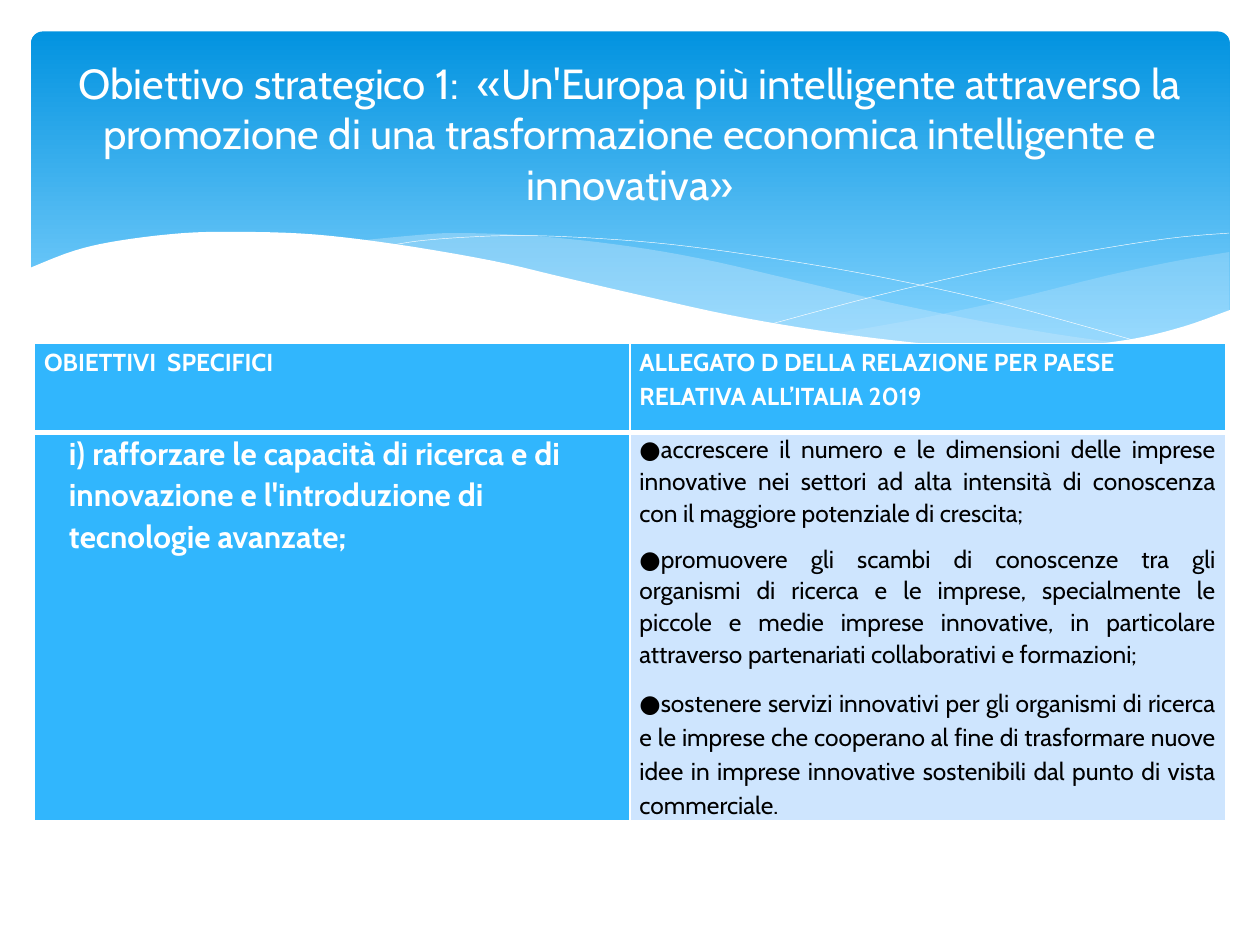
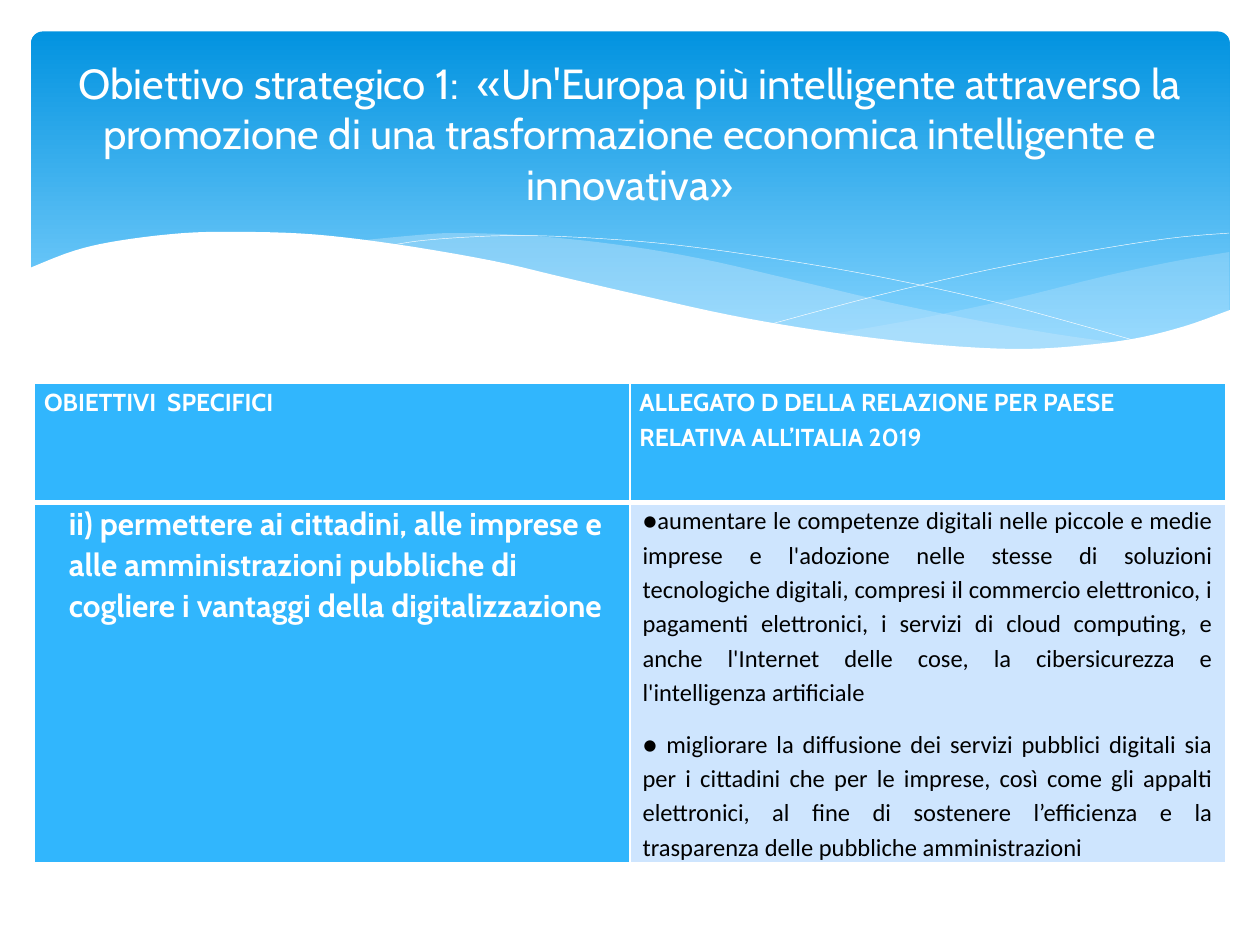
from dataclasses import dataclass

from lxml.etree import SubElement
from pptx import Presentation
from pptx.dml.color import RGBColor
from pptx.enum.shapes import MSO_SHAPE
from pptx.enum.text import MSO_ANCHOR, PP_ALIGN
from pptx.oxml.ns import qn
from pptx.util import Pt


@dataclass(frozen=True)
class Theme:
    white: str = "FFFFFF"
    black: str = "000000"
    band_top: str = "0293E0"
    band_bottom: str = "83D3FE"
    swell: str = "C6E7FC"
    accent: str = "31B6FD"
    pale: str = "CEE5FE"
    font: str = "Cabin"
    alt_font: str = "Calibri"
    title_size: int = 24
    goal_size: int = 18
    text_size: int = 14


@dataclass(frozen=True)
class Box:
    x: float
    y: float
    w: float
    h: float


@dataclass(frozen=True)
class Point:
    text: str
    line: float
    after: float = 0


@dataclass(frozen=True)
class Objective:
    table: Box
    header_h: float
    goal: str
    points: tuple
    font: str
    margin: float


T = Theme()
BAND = Box(17.8, 18, 684.9, 194.4)
TITLE_BOX = Box(36, 26.8, 648, 98.6)
TITLE = ("Obiettivo strategico 1:  «Un'Europa più intelligente attraverso la promozione "
         "di una trasformazione economica intelligente e innovativa»")
HEADERS = ("OBIETTIVI  SPECIFICI",
           "ALLEGATO D DELLA RELAZIONE PER PAESE RELATIVA ALL’ITALIA 2019")

# Wave nodes, in points from the top left corner of the band
RIGHT_SWELL_TOP = [(684.7, 126), (655, 131), (623.5, 137.5), (602, 142.6),
                   (561.6, 152.6), (507, 164.2), (458, 172.8)]
RIGHT_SWELL_BASE = [(458, 172.8), (489.6, 177), (527, 180.7), (560, 182.2), (589.7, 181.4),
                    (616.3, 178.6), (645, 172.8), (665.3, 167), (684.7, 159.8)]
LEFT_SWELL_TOP = [(188, 119.5), (218, 116.6), (242, 115.2), (284.4, 116.6), (334, 121.7),
                  (381.6, 129.6), (435, 141.8), (490.3, 154.8), (540, 165),
                  (584.6, 172.8), (625, 178.6)]
LEFT_SWELL_BASE = [(625, 178.6), (599, 181.4), (571, 182.2), (530, 181.4), (482.4, 176.4),
                   (427, 167.8), (363.6, 154.8), (305.3, 141.8), (257.8, 131),
                   (228, 125.3), (188, 119.5)]
FALLING_LINE = [(204.5, 122.4), (223, 119.5), (251.3, 117.4), (281.5, 116.6), (319.7, 118),
                (365.8, 121.7), (419.8, 129), (482.4, 139.7), (554.4, 155.5), (635, 177.8)]
RISING_LINE = [(423.4, 167), (482.4, 151.2), (540.7, 137.5), (584, 129), (626.4, 121.7),
               (657.4, 117.4), (684.5, 115.2)]
FRONT_WAVE = [(-1.4, 135.4), (24.5, 125.3), (50.4, 119.5), (87, 115.2), (121, 114.5),
              (162, 116), (209.5, 121.7), (263.5, 131), (303.8, 140.4), (344.2, 149.8),
              (399, 162), (448.6, 170.6), (491.8, 176.4), (530, 180), (564.5, 181.4),
              (594, 180), (629.3, 175.7), (658.8, 168.5), (685.4, 159)]
FRONT_BASE = [(685.4, 219), (-1.4, 219)]

OBJECTIVES = (
    Objective(
        Box(19.8, 196.2, 680.4, 273), 51,
        "i) rafforzare le capacità di ricerca e di innovazione e l'introduzione di "
        "tecnologie avanzate;",
        (Point("●accrescere il numero e le dimensioni delle imprese innovative nei settori ad "
               "alta intensità di conoscenza con il maggiore potenziale di crescita;", 1.07, 8),
         Point("●promuovere gli scambi di conoscenze tra gli organismi di ricerca e le imprese, "
               "specialmente le piccole e medie imprese innovative, in particolare attraverso "
               "partenariati collaborativi e formazioni;", 1.07, 8),
         Point("●sostenere servizi innovativi per gli organismi di ricerca e le imprese che "
               "cooperano al fine di trasformare nuove idee in imprese innovative sostenibili "
               "dal punto di vista commerciale.", 1.15)),
        T.font, 5.4),
    Objective(
        Box(19.8, 219.2, 680.4, 274), 67.8,
        "ii) permettere ai cittadini, alle imprese e alle amministrazioni pubbliche di "
        "cogliere i vantaggi della digitalizzazione",
        (Point("●aumentare le competenze digitali nelle piccole e medie imprese e l'adozione "
               "nelle stesse di soluzioni tecnologiche digitali, compresi il commercio "
               "elettronico, i pagamenti elettronici, i servizi di cloud computing, e anche "
               "l'Internet delle cose, la cibersicurezza e l'intelligenza artificiale", 1.15, 10),
         Point("● migliorare la diffusione dei servizi pubblici digitali sia per i cittadini che "
               "per le imprese, così come gli appalti elettronici, al fine di sostenere "
               "l’efficienza e la trasparenza delle pubbliche amministrazioni", 1.15, 10)),
        T.alt_font, 7.2),
)


def rgb(color):
    return RGBColor.from_string(color)


def smooth(nodes, steps=5):
    """Return points along a Catmull-Rom curve through the nodes."""
    ends = [nodes[0], *nodes, nodes[-1]]
    curve = []
    for a, b, c, d in zip(ends, ends[1:], ends[2:], ends[3:]):
        for i in range(steps):
            t = i / steps
            curve.append(tuple(
                q + t / 2 * (r - p + t * (2 * p - 5 * q + 4 * r - s
                                          + t * (3 * (q - r) + s - p)))
                for p, q, r, s in zip(a, b, c, d)))
    return curve + [nodes[-1]]


def add_outline(slide, box, points, close):
    pts = [(Pt(box.x + x), Pt(box.y + y)) for x, y in points]
    builder = slide.shapes.build_freeform(*pts[0])
    builder.add_line_segments(pts[1:], close=close)
    sp = builder.convert_to_shape()
    sp.shadow.inherit = False
    return sp


def add_wave(slide, box, points, color, opacity=100):
    sp = add_outline(slide, box, points, True)
    sp.fill.solid()
    sp.fill.fore_color.rgb = rgb(color)
    sp.line.fill.background()
    if opacity < 100:
        clr = sp.fill._xPr.find(qn("a:solidFill"))[0]
        SubElement(clr, qn("a:alpha"), val=str(opacity * 1000))


def add_thin_line(slide, box, nodes):
    sp = add_outline(slide, box, smooth(nodes), False)
    sp.fill.background()
    sp.line.color.rgb = rgb(T.white)
    sp.line.width = Pt(0.25)


def add_band(slide, box):
    sp = slide.shapes.add_shape(MSO_SHAPE.ROUNDED_RECTANGLE,
                                Pt(box.x), Pt(box.y), Pt(box.w), Pt(box.h))
    sp.adjustments[0] = 0.034
    sp.shadow.inherit = False
    sp.line.fill.background()
    sp.fill.gradient()
    sp.fill.gradient_angle = 270
    stops = ((0, T.band_top), (0.9, T.band_bottom))
    for stop, (position, color) in zip(sp.fill.gradient_stops, stops):
        stop.position = position
        stop.color.rgb = rgb(color)
    add_wave(slide, box, smooth(RIGHT_SWELL_TOP) + smooth(RIGHT_SWELL_BASE), T.swell, 29)
    add_wave(slide, box, smooth(LEFT_SWELL_TOP) + smooth(LEFT_SWELL_BASE), T.swell, 40)
    add_thin_line(slide, box, FALLING_LINE)
    add_thin_line(slide, box, RISING_LINE)
    add_wave(slide, box, smooth(FRONT_WAVE) + FRONT_BASE, T.white)


def style_paragraph(p, size, color, font=T.font, bold=False):
    p.font.name = font
    p.font.size = Pt(size)
    p.font.bold = bold
    p.font.color.rgb = rgb(color)


def add_title(slide, box):
    tf = slide.shapes.add_textbox(Pt(box.x), Pt(box.y), Pt(box.w), Pt(box.h)).text_frame
    tf.word_wrap = True
    tf.vertical_anchor = MSO_ANCHOR.MIDDLE
    p = tf.paragraphs[0]
    p.text = TITLE
    p.alignment = PP_ALIGN.CENTER
    style_paragraph(p, T.title_size, T.white)


def style_cell(cell, fill, margin, bottom):
    """Set margins, white borders (bottom: width of the lower one) and fill."""
    cell.margin_left = cell.margin_right = Pt(margin)
    cell.margin_top = cell.margin_bottom = 0
    tcPr = cell._tc.get_or_add_tcPr()
    for side, width in (("L", 1), ("R", 1), ("T", 1), ("B", bottom)):
        ln = SubElement(tcPr, qn(f"a:ln{side}"), w=str(Pt(width)))
        SubElement(SubElement(ln, qn("a:solidFill")), qn("a:srgbClr"), val=T.white)
    cell.fill.solid()
    cell.fill.fore_color.rgb = rgb(fill)


def add_objective_table(slide, objective):
    box = objective.table
    table = slide.shapes.add_table(2, 2, Pt(box.x), Pt(box.y), Pt(box.w), Pt(box.h)).table
    for col in table.columns:
        col.width = Pt(box.w / 2)
    table.rows[0].height = Pt(objective.header_h)
    table.rows[1].height = Pt(box.h - objective.header_h)

    for i, header in enumerate(HEADERS):
        cell = table.cell(0, i)
        style_cell(cell, T.accent, 5.4, 3)
        p = cell.text_frame.paragraphs[0]
        p.text = header
        p.line_spacing = 1.15
        style_paragraph(p, T.text_size, T.white, bold=True)

    goal = table.cell(1, 0)
    style_cell(goal, T.accent, 5.4, 1)
    p = goal.text_frame.paragraphs[0]
    p.text = objective.goal
    p.line_spacing = 1.07
    p.space_after = Pt(8)
    p._p.get_or_add_pPr().set("marL", str(Pt(14.2)))
    style_paragraph(p, T.goal_size, T.white, bold=True)

    actions = table.cell(1, 1)
    style_cell(actions, T.pale, objective.margin, 1)
    tf = actions.text_frame
    for i, point in enumerate(objective.points):
        p = tf.add_paragraph() if i else tf.paragraphs[0]
        p.text = point.text
        p.alignment = PP_ALIGN.JUSTIFY
        p.line_spacing = point.line
        p.space_after = Pt(point.after)
        style_paragraph(p, T.text_size, T.black, objective.font)


def add_objective_slide(prs, objective):
    slide = prs.slides.add_slide(prs.slide_layouts[6])
    add_band(slide, BAND)
    add_title(slide, TITLE_BOX)
    add_objective_table(slide, objective)


def main():
    prs = Presentation()
    prs.slide_width, prs.slide_height = Pt(720), Pt(540)
    for objective in OBJECTIVES:
        add_objective_slide(prs, objective)
    prs.save("out.pptx")


if __name__ == "__main__":
    main()
